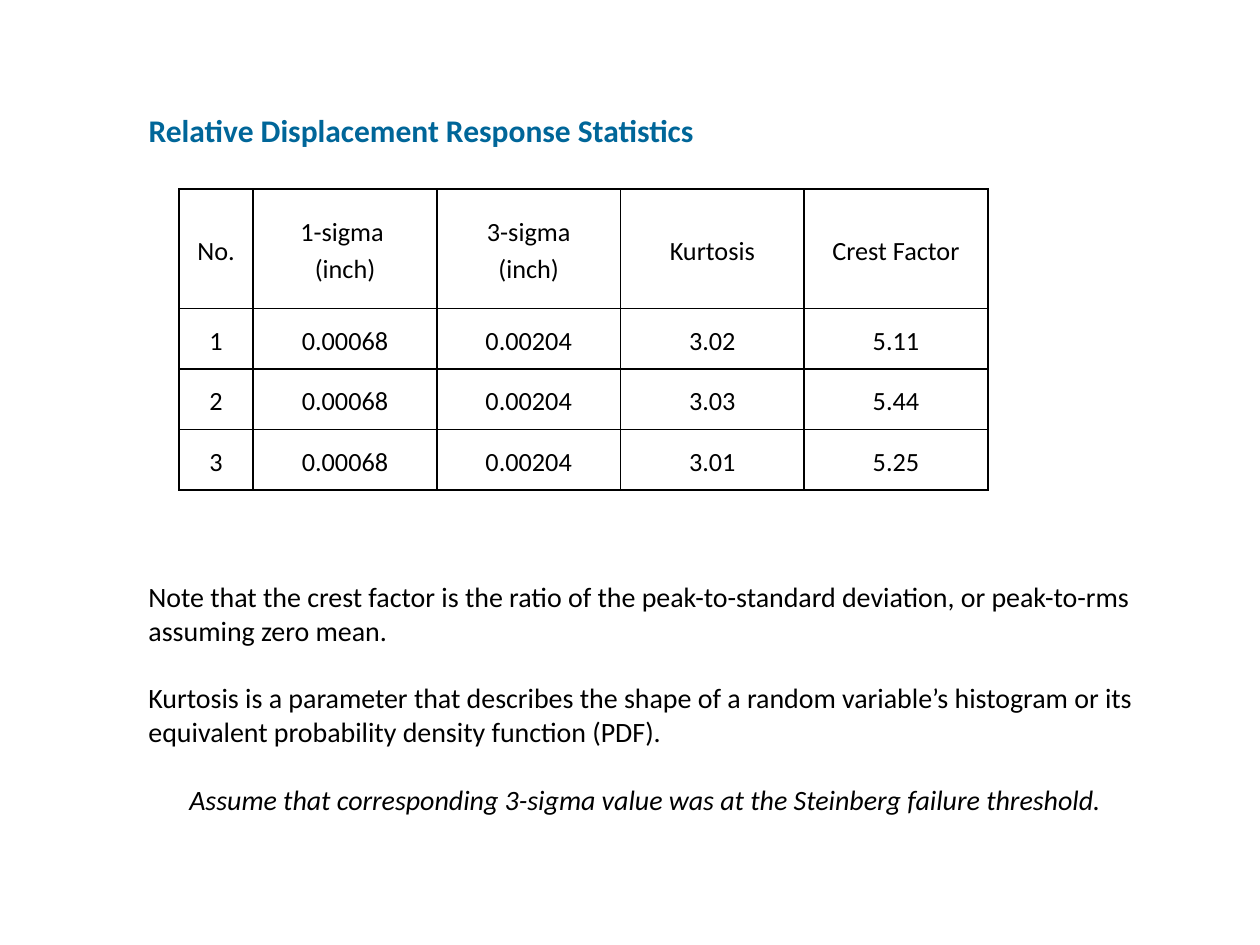
from dataclasses import dataclass

from lxml import etree
from pptx import Presentation
from pptx.dml.color import RGBColor
from pptx.enum.text import MSO_ANCHOR, MSO_AUTO_SIZE, PP_ALIGN
from pptx.oxml.ns import qn
from pptx.util import Inches, Pt

LEFT, CENTER = PP_ALIGN.LEFT, PP_ALIGN.CENTER
TOP, MIDDLE = MSO_ANCHOR.TOP, MSO_ANCHOR.MIDDLE
NO_FIT = MSO_AUTO_SIZE.NONE
TITLE_ONLY = 5


@dataclass(frozen=True)
class Theme:
    font: str = "Calibri"
    ink: str = "000000"
    blue: str = "006699"
    title: int = 18
    note: int = 16
    cell: int = 15
    rule: int = 1


THEME = Theme()

HEAD = ["No.", "1-sigma \n(inch)", "3-sigma\n(inch)", "Kurtosis", "Crest Factor"]
STATS = [
    ["1", "0.00068", "0.00204", "3.02", "5.11"],
    ["2", "0.00068", "0.00204", "3.03", "5.44"],
    ["3", "0.00068", "0.00204", "3.01", "5.25"],
]
NOTES = [
    ("Note that the crest factor is the ratio of the peak-to-standard deviation, "
     "or peak-to-rms assuming zero mean.", LEFT, False),
    ("Kurtosis is a parameter that describes the shape of a random variable’s "
     "histogram or its equivalent probability density function (PDF).", LEFT, False),
    ("Assume that corresponding 3-sigma value was at the Steinberg failure "
     "threshold.", CENTER, True),
]


def assign(item, **values):
    for name, value in values.items():
        setattr(item, name, value)


def style(para, size, color=THEME.ink, align=LEFT, bold=False, italic=False):
    para.alignment = align
    for run in para.runs:
        assign(run.font, name=THEME.font, size=Pt(size), bold=bold, italic=italic)
        run.font.color.rgb = RGBColor.from_string(color)


def border(cell):
    """Rule all four sides of a cell."""
    props = cell._tc.get_or_add_tcPr()
    for spot, side in enumerate(("lnL", "lnR", "lnT", "lnB")):
        line = etree.Element(qn(f"a:{side}"), w=str(Pt(THEME.rule)))
        fill = etree.SubElement(line, qn("a:solidFill"))
        etree.SubElement(fill, qn("a:srgbClr"), val=THEME.ink)
        props.insert(spot, line)


def add_title(slide, left, top, width, height):
    title = slide.shapes.title
    assign(title, left=left, top=top, width=width, height=height)
    frame = title.text_frame
    frame.text = "Relative Displacement Response Statistics"
    assign(frame, word_wrap=True, auto_size=NO_FIT, vertical_anchor=TOP)
    style(frame.paragraphs[0], THEME.title, THEME.blue, bold=True)


def add_stats(slide, left, top, width, height):
    rows = [HEAD, *STATS]
    table = slide.shapes.add_table(
        len(rows), len(HEAD), left, top, width, height).table
    assign(table, first_row=False, horz_banding=False)

    first, line = Inches(0.59), Inches(0.48)
    for i, col in enumerate(table.columns):
        col.width = first if i == 0 else (width - first) // (len(HEAD) - 1)
    for i, row in enumerate(table.rows):
        row.height = height - line * len(STATS) if i == 0 else line

    pad = Inches(0.07)
    for r, row in enumerate(rows):
        for c, text in enumerate(row):
            cell = table.cell(r, c)
            cell.text = text
            assign(cell, vertical_anchor=MIDDLE, margin_left=pad,
                   margin_right=pad, margin_top=0, margin_bottom=0)
            cell.fill.background()
            border(cell)
            for para in cell.text_frame.paragraphs:
                para.line_spacing = 1.15
                style(para, THEME.cell, align=CENTER)


def add_notes(slide, left, top, width, height):
    frame = slide.shapes.add_textbox(left, top, width, height).text_frame
    assign(frame, word_wrap=True, auto_size=NO_FIT, vertical_anchor=TOP,
           margin_top=Inches(0.35))
    for i, (text, align, italic) in enumerate(NOTES):
        para = frame.add_paragraph() if i else frame.paragraphs[0]
        para.text = text
        para.space_before = Pt(19.5 if i else 0)
        style(para, THEME.note, align=align, italic=italic)


def main():
    deck = Presentation()
    assign(deck, slide_width=Inches(10), slide_height=Inches(7.5))
    slide = deck.slides.add_slide(deck.slide_layouts[TITLE_ONLY])
    edge = Inches(1.08)
    add_notes(slide, edge, Inches(4.25), Inches(8.08), Inches(2.59))
    add_stats(slide, Inches(1.42), Inches(1.5), Inches(6.42), Inches(2.39))
    add_title(slide, edge, Inches(0.83), Inches(6.08), Inches(0.4))
    deck.save("out.pptx")


if __name__ == "__main__":
    main()
